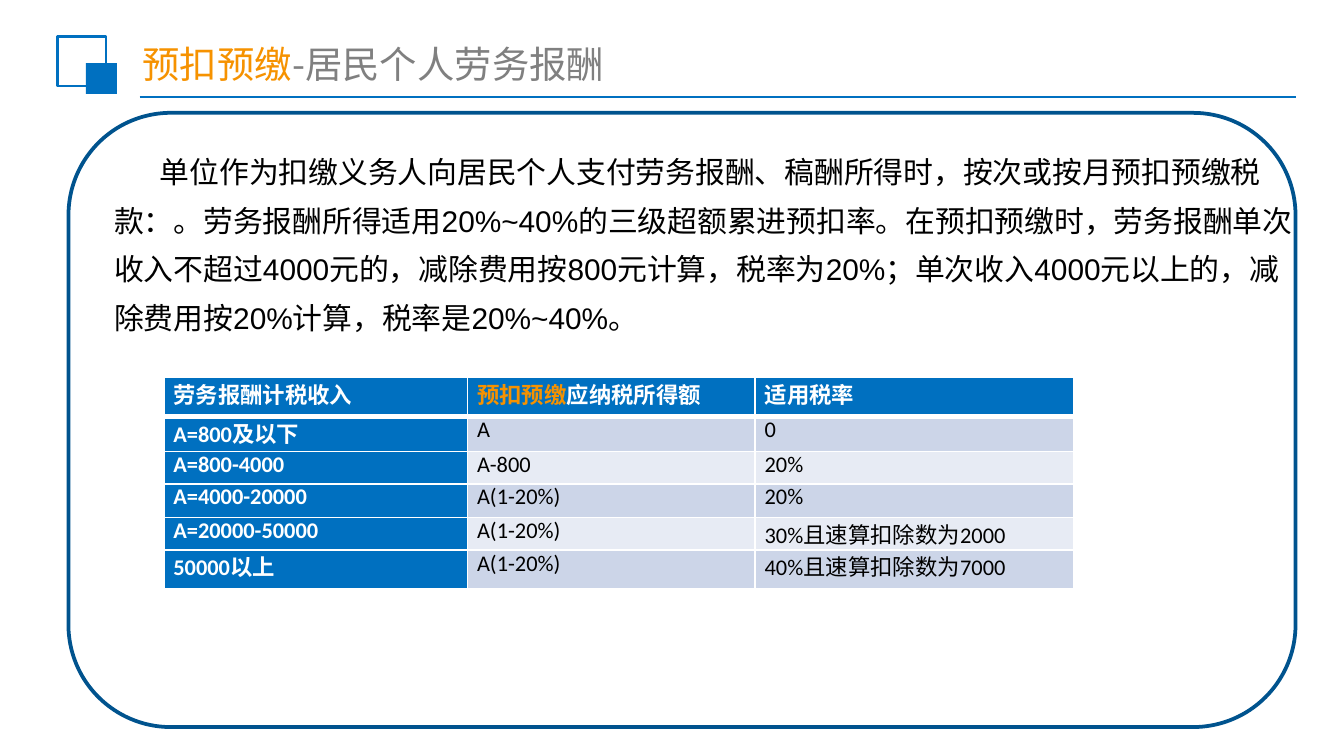
from lxml import etree
from pptx import Presentation
from pptx.dml.color import RGBColor
from pptx.enum.shapes import MSO_CONNECTOR, MSO_SHAPE
from pptx.enum.text import MSO_ANCHOR, PP_ALIGN
from pptx.oxml.ns import qn
from pptx.util import Inches, Pt

RECTANGLE = MSO_SHAPE.RECTANGLE
ROUNDED_RECTANGLE = MSO_SHAPE.ROUNDED_RECTANGLE
STRAIGHT = MSO_CONNECTOR.STRAIGHT
LEFT, JUSTIFY = PP_ALIGN.LEFT, PP_ALIGN.JUSTIFY
MIDDLE = MSO_ANCHOR.MIDDLE

BLUE = RGBColor(0x00, 0x70, 0xC0)
DARK_BLUE = RGBColor(0x00, 0x53, 0x8E)
ORANGE = RGBColor(0xF6, 0x92, 0x00)
GRAY = RGBColor(0x80, 0x80, 0x80)
BLACK = RGBColor(0x00, 0x00, 0x00)
WHITE = RGBColor(0xFF, 0xFF, 0xFF)
BAND_COLORS = (RGBColor(0xCC, 0xD5, 0xE8), RGBColor(0xE7, 0xEB, 0xF4))

CHINESE_FONT = "Noto Sans CJK SC"
TITLE_ONLY = 5

BODY_TEXT = (
    "单位作为扣缴义务人向居民个人支付劳务报酬、稿酬所得时，按次或按月预扣预缴税款：。"
    "劳务报酬所得适用20%~40%的三级超额累进预扣率。"
    "在预扣预缴时，劳务报酬单次收入不超过4000元的，减除费用按800元计算，税率为20%；"
    "单次收入4000元以上的，减除费用按20%计算，税率是20%~40%。"
)
COLUMN_WIDTHS = (2.26, 2.14, 2.37)
ROW_HEIGHTS = (0.29, 0.26, 0.24, 0.25, 0.22, 0.29)
TAX_ROWS = (
    ("劳务报酬计税收入", "预扣预缴应纳税所得额", "适用税率"),
    ("A=800及以下", "A", "0"),
    ("A=800-4000", "A-800", "20%"),
    ("A=4000-20000", "A(1-20%)", "20%"),
    ("A=20000-50000", "A(1-20%)", "30%且速算扣除数为2000"),
    ("50000以上", "A(1-20%)", "40%且速算扣除数为7000"),
)
HIGHLIGHT = "预扣预缴"


def add_run(paragraph, text, size, color, font_name, bold=False):
    run = paragraph.add_run()
    run.text = text
    font = run.font
    font.size, font.bold, font.name = Pt(size), bold, font_name
    font.color.rgb = color
    east_asian = etree.SubElement(run._r.get_or_add_rPr(), qn("a:ea"))
    east_asian.set("typeface", CHINESE_FONT)


def add_box(slide, kind, left, top, width, height, fill=None, line=None, line_width=1):
    shape = slide.shapes.add_shape(
        kind, Inches(left), Inches(top), Inches(width), Inches(height))
    shape.shadow.inherit = False
    if fill is None:
        shape.fill.background()
    else:
        shape.fill.solid()
        shape.fill.fore_color.rgb = fill
    if line is None:
        shape.line.fill.background()
    else:
        shape.line.color.rgb = line
        shape.line.width = Pt(line_width)


def add_rule(slide, left, right, y):
    rule = slide.shapes.add_connector(
        STRAIGHT, Inches(left), Inches(y), Inches(right), Inches(y))
    rule.line.color.rgb = BLUE
    rule.line.width = Pt(1.25)
    etree.SubElement(rule._element.spPr, qn("a:effectLst"))


def set_title(slide):
    title = slide.shapes.title
    title.left, title.top = Inches(0.99), Inches(0.29)
    title.width, title.height = Inches(6.45), Inches(0.36)
    frame = title.text_frame
    frame.vertical_anchor = MIDDLE
    frame.margin_left = frame.margin_right = Inches(0.07)
    frame.margin_top = frame.margin_bottom = Inches(0.04)
    paragraph = frame.paragraphs[0]
    paragraph.alignment = LEFT
    add_run(paragraph, HIGHLIGHT, 20, ORANGE, CHINESE_FONT)
    add_run(paragraph, "-居民个人劳务报酬", 20, GRAY, CHINESE_FONT)


def add_body(slide):
    box = slide.shapes.add_textbox(Inches(0.75), Inches(1), Inches(8.98), Inches(1.56))
    frame = box.text_frame
    frame.word_wrap = True
    paragraph = frame.paragraphs[0]
    paragraph.line_spacing = Pt(26)
    paragraph._p.get_or_add_pPr().set("indent", str(Inches(0.34)))
    add_run(paragraph, BODY_TEXT, 16, BLACK, "Arial")


def set_borders(cell, top, bottom):
    """Draw white cell borders; must run before the cell's fill is set."""
    properties = cell._tc.get_or_add_tcPr()
    for tag, width in (("lnL", 1), ("lnR", 1), ("lnT", top), ("lnB", bottom)):
        line = etree.SubElement(properties, qn(f"a:{tag}"), w=str(Pt(width)))
        fill = etree.SubElement(line, qn("a:solidFill"))
        etree.SubElement(fill, qn("a:srgbClr"), val=str(WHITE))


def fill_cell(cell, text, row, column):
    is_heading = row == 0 or column == 0
    set_borders(cell, 3 if row == 1 else 1, 3 if row == 0 else 1)
    cell.fill.solid()
    cell.fill.fore_color.rgb = BLUE if is_heading else BAND_COLORS[(row - 1) % 2]
    cell.margin_left = cell.margin_right = Inches(0.07)
    cell.margin_top = cell.margin_bottom = 0
    paragraph = cell.text_frame.paragraphs[0]
    paragraph.alignment = JUSTIFY
    if text.startswith(HIGHLIGHT):
        add_run(paragraph, HIGHLIGHT, 12, ORANGE, "Calibri", True)
        text = text.removeprefix(HIGHLIGHT)
    add_run(paragraph, text, 12, WHITE if is_heading else BLACK, "Calibri", is_heading)


def add_tax_table(slide):
    table = slide.shapes.add_table(
        len(ROW_HEIGHTS), len(COLUMN_WIDTHS), Inches(1.22), Inches(2.81),
        Inches(sum(COLUMN_WIDTHS)), Inches(sum(ROW_HEIGHTS))).table
    for column, width in zip(table.columns, COLUMN_WIDTHS):
        column.width = Inches(width)
    for row, height in zip(table.rows, ROW_HEIGHTS):
        row.height = Inches(height)
    for row, texts in enumerate(TAX_ROWS):
        for column, text in enumerate(texts):
            fill_cell(table.cell(row, column), text, row, column)


def main():
    presentation = Presentation()
    presentation.slide_width = Inches(10)
    presentation.slide_height = Inches(10 * 9 / 16)
    slide = presentation.slides.add_slide(presentation.slide_layouts[TITLE_ONLY])
    add_rule(slide, 1.04, 9.64, 0.72)
    add_box(slide, RECTANGLE, 0.43, 0.27, 0.36, 0.37, line=BLUE, line_width=1.5)
    add_box(slide, RECTANGLE, 0.64, 0.47, 0.23, 0.23, fill=BLUE)
    set_title(slide)
    add_box(slide, ROUNDED_RECTANGLE, 0.51, 0.84, 9.13, 4.57, line=DARK_BLUE, line_width=2)
    add_tax_table(slide)
    add_body(slide)
    presentation.save("out.pptx")


if __name__ == "__main__":
    main()
